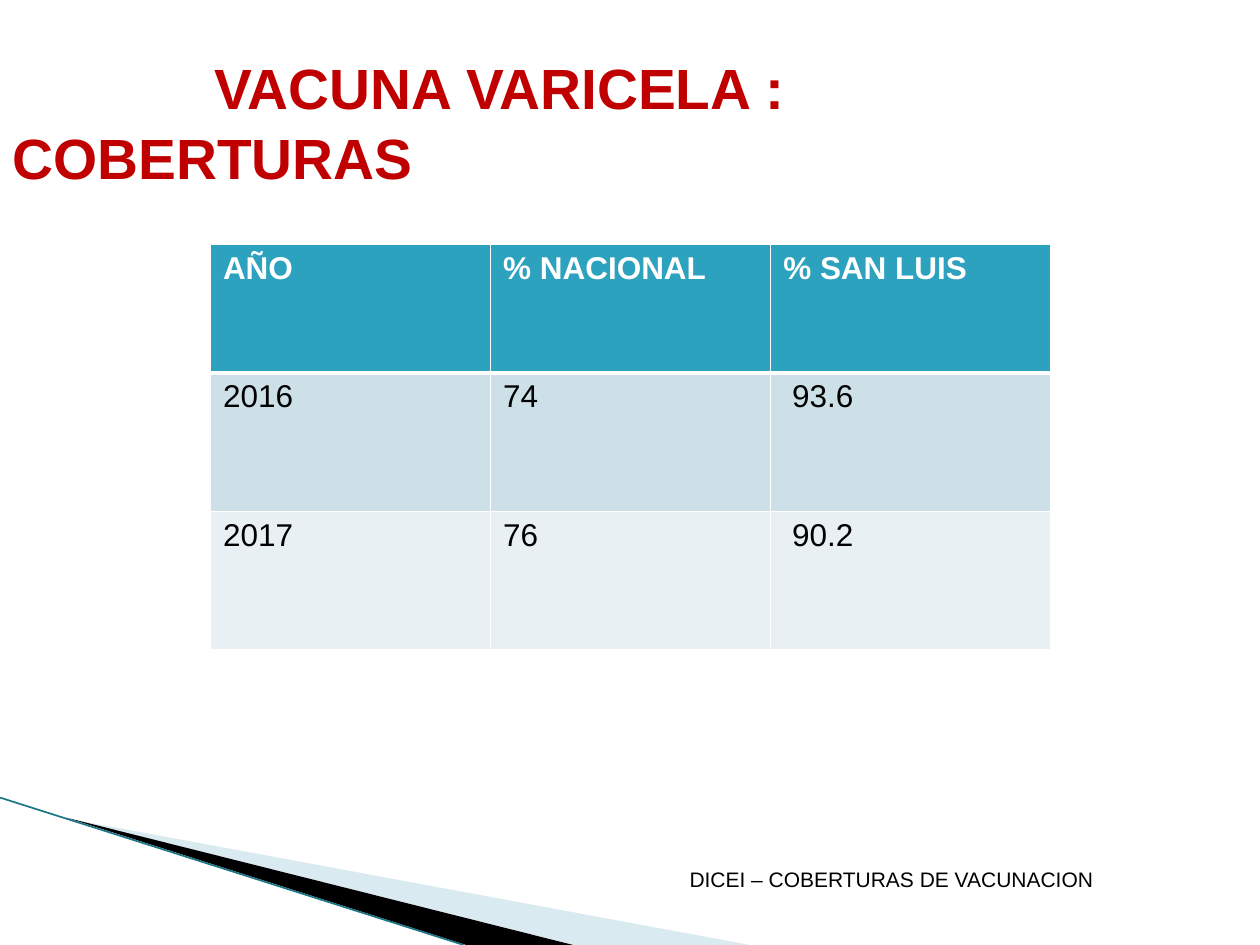
from dataclasses import dataclass

from lxml import etree
from pptx import Presentation
from pptx.dml.color import RGBColor as RGB
from pptx.enum.shapes import MSO_CONNECTOR as Conn
from pptx.enum.text import MSO_ANCHOR as Anchor, PP_ALIGN as Align
from pptx.oxml.ns import qn
from pptx.util import Inches, Pt


@dataclass(frozen=True)
class Theme:
    font: str = "Arial"
    title: str = "C00000"
    text: str = "000000"
    white: str = "FFFFFF"
    header: str = "2DA2BF"
    bands: tuple = ("CDE0E8", "E8F0F4")
    pale: str = "A0CBDC"
    edge: str = "1B7587"
    title_size: float = 32.4
    table_size: float = 18
    footer_size: float = 12


class Deck:
    def __init__(self, prs, theme):
        self.theme = theme
        self.slide = prs.slides.add_slide(prs.slide_layouts[5])
        self.shapes = self.slide.shapes

    def style(self, p, size, color, bold=False):
        font = p.font
        font.name, font.size, font.bold = self.theme.font, Pt(size), bold
        font.color.rgb = RGB.from_string(color)

    def wedge(self, points, color, alpha=None):
        pts = [(Inches(x), Inches(y)) for x, y in points]
        builder = self.shapes.build_freeform(*pts[0])
        builder.add_line_segments(pts[1:], close=True)
        sp = builder.convert_to_shape()
        sp.shadow.inherit = False
        sp.line.fill.background()
        sp.fill.solid()
        sp.fill.fore_color.rgb = RGB.from_string(color)
        if alpha is not None:
            clr = sp.fill._xPr.find(qn("a:solidFill"))[0]
            etree.SubElement(clr, qn("a:alpha"), val=str(alpha * 1000))

    def line(self, start, end, color, width):
        ends = [Inches(v) for v in (*start, *end)]
        cxn = self.shapes.add_connector(Conn.STRAIGHT, *ends)
        cxn.line.color.rgb = RGB.from_string(color)
        cxn.line.width = Pt(width)
        etree.SubElement(cxn._element.spPr, qn("a:effectLst"))

    def title(self, text, box, indent):
        sp = self.shapes.title
        sp.left, sp.top, sp.width, sp.height = map(Inches, box)
        tf = sp.text_frame
        tf.text, tf.word_wrap = text, True
        tf.vertical_anchor = Anchor.MIDDLE
        tf.margin_top = Inches(0.12)
        p = tf.paragraphs[0]
        p.alignment, p.line_spacing = Align.LEFT, Pt(40)
        p._p.get_or_add_pPr().set("indent", str(Inches(indent)))
        self.style(p, self.theme.title_size, self.theme.title, True)

    def borders(self, cell, bottom):
        tc_pr = cell._tc.get_or_add_tcPr()
        for side, width in (("L", 1), ("R", 1), ("T", 1), ("B", bottom)):
            ln = etree.SubElement(tc_pr, qn(f"a:ln{side}"), w=str(Pt(width)))
            fill = etree.SubElement(ln, qn("a:solidFill"))
            etree.SubElement(fill, qn("a:srgbClr"), val=self.theme.white)

    def table(self, rows, box, heights):
        t = self.theme
        table = self.shapes.add_table(len(rows), len(rows[0]), *map(Inches, box)).table
        table.horz_banding = False
        for r, (values, height) in enumerate(zip(rows, heights)):
            table.rows[r].height = Inches(height)
            head = r == 0
            for c, value in enumerate(values):
                cell = table.cell(r, c)
                self.borders(cell, 3 if head else 1)
                cell.fill.solid()
                cell.fill.fore_color.rgb = RGB.from_string(t.header if head else t.bands[(r - 1) % 2])
                cell.text = value
                if c == 2 and not head:
                    cell.margin_left = Inches(0.17)
                p = cell.text_frame.paragraphs[0]
                self.style(p, t.table_size, t.white if head else t.text, head)

    def footer(self, text, box):
        tf = self.shapes.add_textbox(*map(Inches, box)).text_frame
        tf.text, tf.word_wrap = text, True
        tf.vertical_anchor = Anchor.BOTTOM
        tf.margin_right = Inches(0.15)
        p = tf.paragraphs[0]
        p.alignment = Align.RIGHT
        self.style(p, self.theme.footer_size, self.theme.text)


def main():
    prs = Presentation()
    prs.slide_width, prs.slide_height = Inches(10), Inches(7.5)
    theme = Theme()
    deck = Deck(prs, theme)
    deck.wedge([(0.55, 6.5), (5.95, 7.5), (4.56, 7.5)], theme.pale, 40)
    deck.wedge([(0.53, 6.49), (4.55, 7.5), (3.7, 7.5)], theme.text)
    deck.line((0, 6.33), (3.68, 7.5), theme.edge, 0.95)
    deck.title("VACUNA VARICELA : COBERTURAS", (0, 0.3, 9.5, 1.25), 1.6)
    rows = [
        ("AÑO", "% NACIONAL", "% SAN LUIS"),
        ("2016", "74", "93.6"),
        ("2017", "76", "90.2"),
    ]
    deck.table(rows, (1.67, 1.94, 6.67, 3.22), (1.02, 1.1, 1.1))
    deck.footer("DICEI – COBERTURAS DE VACUNACION", (5, 6.66, 3.83, 0.47))
    prs.save("out.pptx")


if __name__ == "__main__":
    main()
